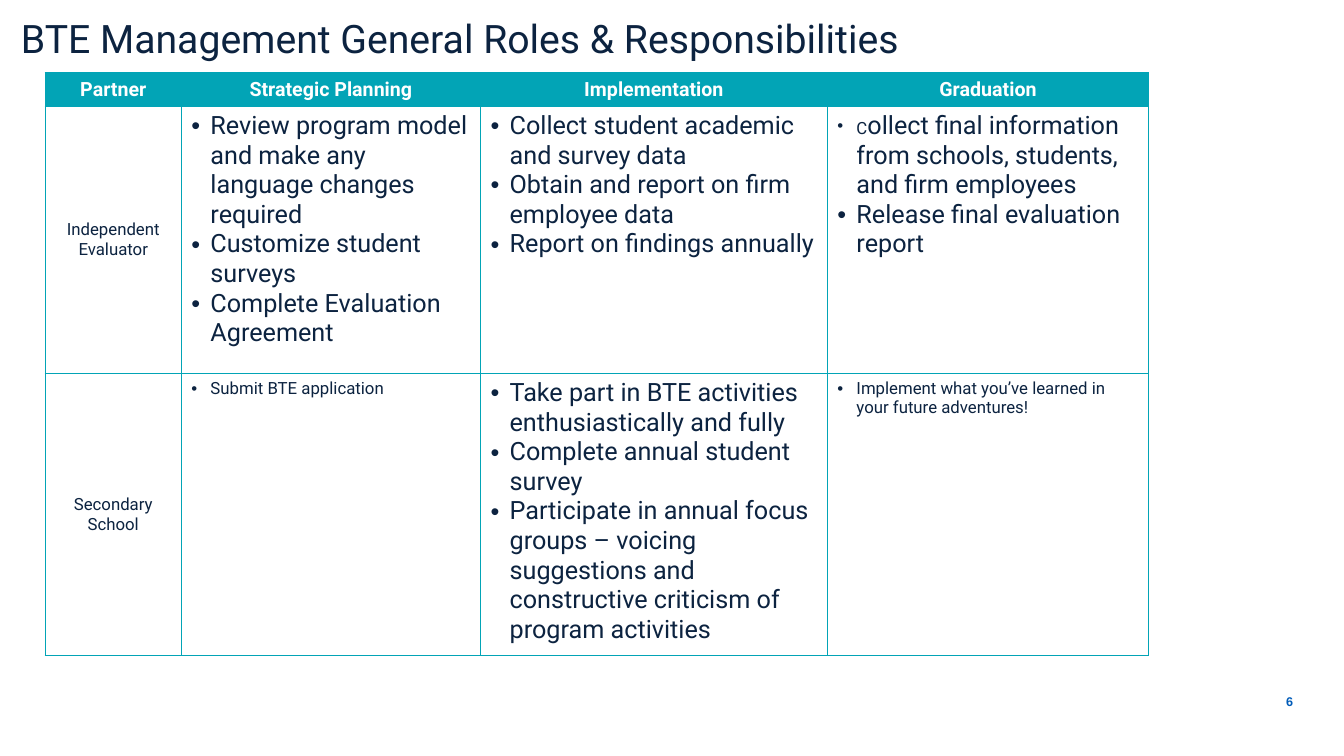
from dataclasses import dataclass

from lxml import etree
from pptx import Presentation
from pptx.dml.color import RGBColor
from pptx.enum.text import MSO_ANCHOR, PP_ALIGN
from pptx.oxml.ns import qn
from pptx.util import Cm, Pt

CENTER, LEFT, RIGHT = PP_ALIGN.CENTER, PP_ALIGN.LEFT, PP_ALIGN.RIGHT
TOP, MIDDLE, BOTTOM = MSO_ANCHOR.TOP, MSO_ANCHOR.MIDDLE, MSO_ANCHOR.BOTTOM


@dataclass(frozen=True)
class Theme:
    font: str = "Roboto"
    number_font: str = "Arial"
    navy: str = "0C2340"
    teal: str = "02A4B6"
    blue: str = "005CB9"
    white: str = "FFFFFF"
    title: int = 28
    large: int = 18
    header: int = 14
    small: int = 12
    number: int = 9


THEME = Theme()

COLUMNS = [("Partner", 3.43), ("Strategic Planning", 7.54),
           ("Implementation", 8.74), ("Graduation", 8.1)]
ROW_HEIGHTS = [0.74, 6.73, 5.23]

# Each partner has one (type size, bullets) pair per phase
PARTNERS = [
    ("Independent Evaluator", [
        (THEME.large, ["Review program model and make any language changes required",
                       "Customize student surveys",
                       "Complete Evaluation Agreement"]),
        (THEME.large, ["Collect student academic and survey data",
                       "Obtain and report on firm employee data",
                       "Report on findings annually"]),
        (THEME.large, ["Collect final information from schools, students, "
                       "and firm employees",
                       "Release final evaluation report"]),
    ]),
    ("Secondary School", [
        (THEME.small, ["Submit BTE application"]),
        (THEME.large, ["Take part in BTE activities enthusiastically and fully",
                       "Complete annual student survey",
                       "Participate in annual focus groups – voicing suggestions "
                       "and constructive criticism of program activities"]),
        (THEME.small, ["Implement what you’ve learned in your future adventures!"]),
    ]),
]


def style_run(r, size, color, bold=False, font=THEME.font):
    r.font.name = font
    r.font.size = Pt(size)
    r.font.bold = bold
    r.font.color.rgb = RGBColor.from_string(color)


def add_text(slide, box, text, size, color, align=LEFT, anchor=TOP,
             margin=0, bold=False, font=THEME.font):
    sp = slide.shapes.add_textbox(*(Cm(v) for v in box))
    tf = sp.text_frame
    tf.word_wrap = True
    tf.vertical_anchor = anchor
    tf.margin_left = tf.margin_right = Cm(margin)
    tf.margin_top = tf.margin_bottom = Cm(margin / 2)
    tf.text = text
    p = tf.paragraphs[0]
    p.alignment = align
    style_run(p.runs[0], size, color, bold, font)


def add_bullet(p):
    pPr = p._p.get_or_add_pPr()
    pPr.set("marL", str(Cm(0.48)))
    pPr.set("indent", str(-Cm(0.48)))
    etree.SubElement(pPr, qn("a:buFont")).set("typeface", "Arial")
    etree.SubElement(pPr, qn("a:buChar")).set("char", "•")


def set_borders(cell):
    tcPr = cell._tc.get_or_add_tcPr()
    for i, side in enumerate(("lnL", "lnR", "lnT", "lnB")):
        ln = etree.Element(qn(f"a:{side}"), w=str(Pt(1)))
        fill = etree.SubElement(ln, qn("a:solidFill"))
        etree.SubElement(fill, qn("a:srgbClr")).set("val", THEME.teal)
        tcPr.insert(i, ln)


def fill_cell(cell, lines, size, color=THEME.navy, align=LEFT, anchor=TOP,
              bold=False, bullets=False, fill=None):
    cell.vertical_anchor = anchor
    if fill:
        cell.fill.solid()
        cell.fill.fore_color.rgb = RGBColor.from_string(fill)
    else:
        cell.fill.background()
    set_borders(cell)
    tf = cell.text_frame
    tf.text = "\n".join(lines)
    for p in tf.paragraphs:
        p.alignment = align
        if bullets:
            add_bullet(p)
        style_run(p.runs[0], size, color, bold)


def shrink_initial(cell, size):
    """Set the first letter of a cell in a smaller size."""
    p = cell.text_frame.paragraphs[0]
    first = p.runs[0]
    rest = p.add_run()
    rest.text = first.text[1:]
    style_run(rest, first.font.size.pt, THEME.navy)
    first.text = first.text[0]
    first.font.size = Pt(size)


def add_roles_table(slide):
    widths = [width for _, width in COLUMNS]
    table = slide.shapes.add_table(
        len(ROW_HEIGHTS), len(COLUMNS), Cm(1.14), Cm(1.83),
        Cm(sum(widths)), Cm(sum(ROW_HEIGHTS))).table
    table.horz_banding = False
    for column, width in zip(table.columns, widths):
        column.width = Cm(width)
    for row, height in zip(table.rows, ROW_HEIGHTS):
        row.height = Cm(height)

    # Header row
    for c, (heading, _) in enumerate(COLUMNS):
        fill_cell(table.cell(0, c), [heading], THEME.header, THEME.white,
                  CENTER, BOTTOM, bold=True, fill=THEME.teal)

    # One row per partner
    for r, (partner, phases) in enumerate(PARTNERS, 1):
        fill_cell(table.cell(r, 0), [partner], THEME.small,
                  align=CENTER, anchor=MIDDLE)
        for c, (size, lines) in enumerate(phases, 1):
            fill_cell(table.cell(r, c), lines, size, bullets=True)
    shrink_initial(table.cell(1, 3), THEME.small)


def main():
    prs = Presentation()
    prs.slide_width, prs.slide_height = Cm(33.87), Cm(19.05)
    slide = prs.slides.add_slide(prs.slide_layouts[6])

    # Title
    add_text(slide, (0.53, 0.36, 23.5, 1.47),
             "BTE Management General Roles & Responsibilities",
             THEME.title, THEME.navy)

    # Roles by partner and phase
    add_roles_table(slide)

    # Slide number
    add_text(slide, (30.78, 17.17, 2.06, 1.02), "6", THEME.number, THEME.blue,
             RIGHT, MIDDLE, margin=0.25, bold=True, font=THEME.number_font)

    prs.save("out.pptx")


if __name__ == "__main__":
    main()
